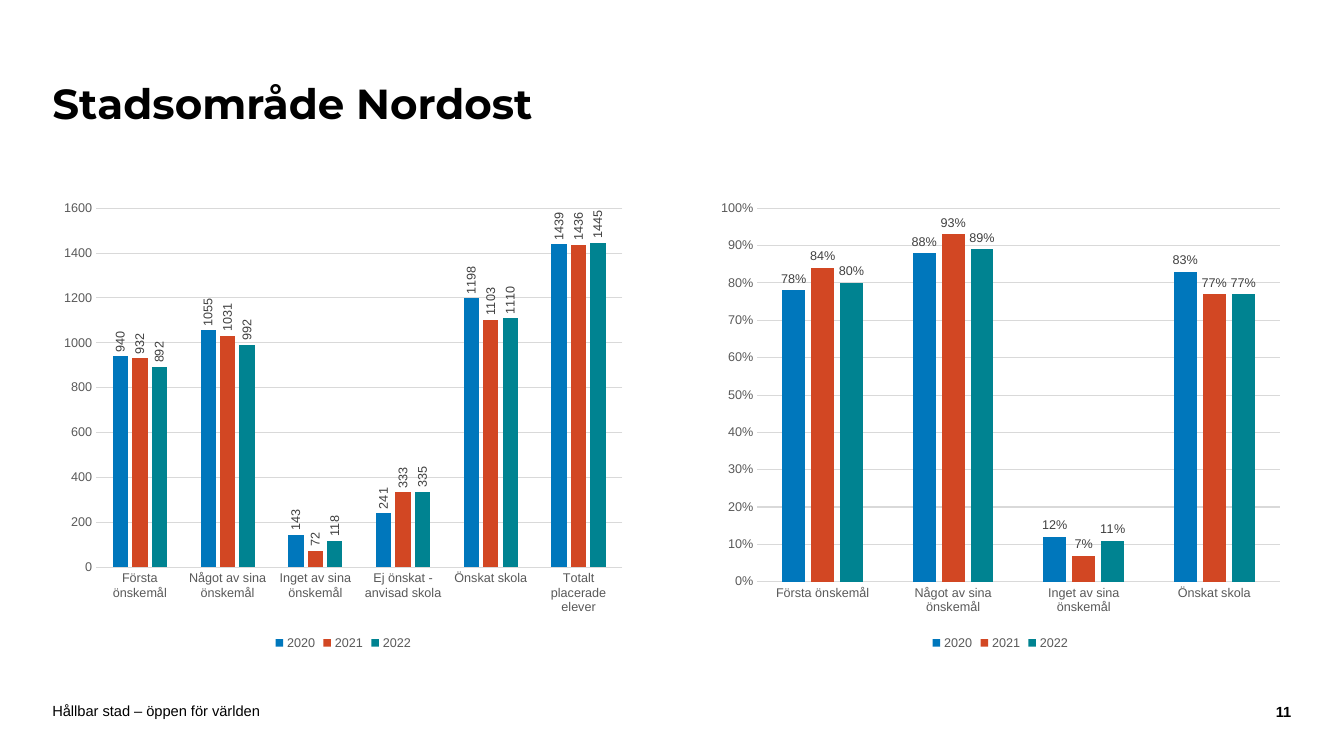
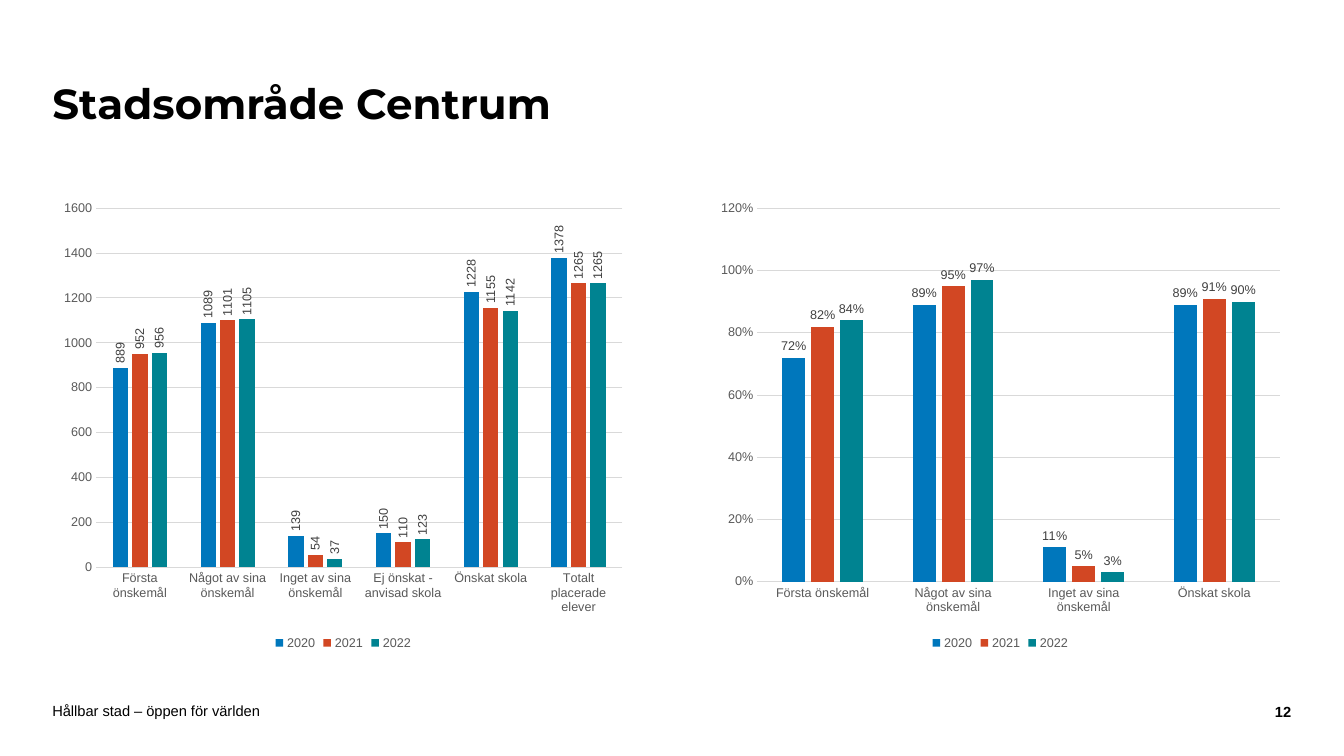
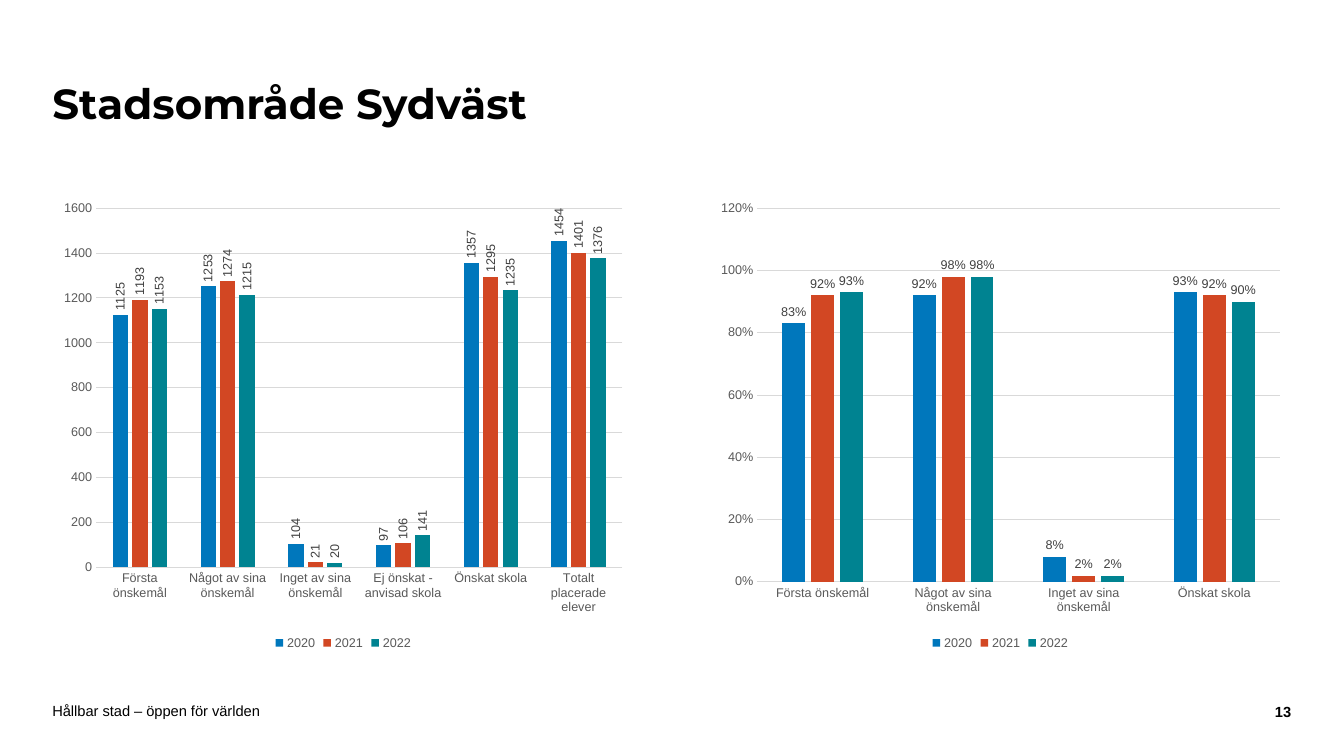
import pptx
import pptx.chart.data
import pptx.dml.color
import pptx.enum.chart
import pptx.enum.text
import pptx.util

Cm, Pt = pptx.util.Cm, pptx.util.Pt
ALIGN = pptx.enum.text.PP_ALIGN
TICK = pptx.enum.chart.XL_TICK_MARK

COLORS = {"text": "000000", "axis": "595959", "label": "404040", "grid": "D9D9D9",
          "2020": "0077BC", "2021": "D24723", "2022": "008391"}
FOOTER = "Hållbar stad – öppen för världen"
FIRST_PAGE = 11

# Layout in cm
MARGIN = 1.32
CHART_W, CHART_H, CHART_TOP = 14.66, 11.66, 4.83
CHART_LEFTS = (MARGIN, 17.88)

# Pupils per category and year
COUNT_CATS = ["Första önskemål", "Något av sina önskemål", "Inget av sina önskemål",
              "Ej önskat - anvisad skola", "Önskat skola", "Totalt placerade elever"]
SHARE_CATS = COUNT_CATS[:3] + ["Önskat skola"]
# Area name, counts, top and step of the share axis
AREAS = [
    ("Nordost", {"2020": [940, 1055, 143, 241, 1198, 1439],
                 "2021": [932, 1031, 72, 333, 1103, 1436],
                 "2022": [892, 992, 118, 335, 1110, 1445]}, 1, 0.1),
    ("Centrum", {"2020": [889, 1089, 139, 150, 1228, 1378],
                 "2021": [952, 1101, 54, 110, 1155, 1265],
                 "2022": [956, 1105, 37, 123, 1142, 1265]}, 1.2, 0.2),
    ("Sydväst", {"2020": [1125, 1253, 104, 97, 1357, 1454],
                 "2021": [1193, 1274, 21, 106, 1295, 1401],
                 "2022": [1153, 1215, 20, 141, 1235, 1376]}, 1.2, 0.2),
]


def rgb(name):
    return pptx.dml.color.RGBColor.from_string(COLORS[name])


def style_font(font, size=9, color="axis", name="Arial", bold=False):
    font.size, font.name, font.bold = Pt(size), name, bold
    font.color.rgb = rgb(color)


def write(tf, text, align=ALIGN.LEFT, spacing=1.0, **font):
    p = tf.paragraphs[0]
    p.alignment, p.line_spacing = align, spacing
    r = p.add_run()
    r.text = text
    style_font(r.font, **font)


def shares(counts):
    """Wishes as a share of those who chose, and choosers as a share of all."""
    *wishes, _, chose, total = counts
    return [round(n / chose, 2) for n in wishes] + [round(chose / total, 2)]


class Deck:
    def __init__(self):
        self.prs = pptx.Presentation()
        self.prs.slide_width, self.prs.slide_height = Cm(33.87), Cm(19.05)
        self.s = None

    def slide(self, title, page):
        self.s = self.prs.slides.add_slide(self.prs.slide_layouts[6])
        self.text(30.91, 17.73, 1.63, 0.41, str(page), align=ALIGN.RIGHT,
                  size=10.5, color="text", bold=True)
        self.text(MARGIN, 17.7, 24, 0.41, FOOTER, size=10.5, color="text")
        self.text(MARGIN, 1.07, 25.48, 3.2, title, pad=0.13, spacing=0.9,
                  size=30, color="text", name="Montserrat", bold=True)

    def text(self, x, y, w, h, text, pad=0, **fmt):
        tf = self.s.shapes.add_textbox(Cm(x), Cm(y), Cm(w), Cm(h)).text_frame
        tf.word_wrap = True
        tf.vertical_anchor = pptx.enum.text.MSO_ANCHOR.MIDDLE
        tf.margin_left = tf.margin_right = 0
        tf.margin_top = tf.margin_bottom = Cm(pad)
        write(tf, text, **fmt)

    def columns(self, x, cats, series, top, step, fmt="General", upright=False):
        data = pptx.chart.data.CategoryChartData(number_format=fmt)
        data.categories = cats
        for name, values in series.items():
            data.add_series(name, values)
        chart = self.s.shapes.add_chart(
            pptx.enum.chart.XL_CHART_TYPE.COLUMN_CLUSTERED,
            Cm(x), Cm(CHART_TOP), Cm(CHART_W), Cm(CHART_H), data).chart
        style_font(chart.font, size=10, color="text")
        chart.has_title = False
        chart.has_legend = True
        chart.legend.position = pptx.enum.chart.XL_LEGEND_POSITION.BOTTOM
        chart.legend.include_in_layout = False
        style_font(chart.legend.font)

        # Axes
        for axis in (chart.category_axis, chart.value_axis):
            axis.major_tick_mark = axis.minor_tick_mark = TICK.NONE
            style_font(axis.tick_labels.font)
        value_axis = chart.value_axis
        value_axis.minimum_scale, value_axis.maximum_scale = 0, top
        value_axis.major_unit = step
        value_axis.tick_labels.number_format = fmt
        value_axis.tick_labels.number_format_is_linked = False
        value_axis.format.line.fill.background()
        for part in (chart.category_axis, value_axis.major_gridlines):
            part.format.line.color.rgb = rgb("grid")
            part.format.line.width = Pt(0.75)

        # Columns and their labels
        plot = chart.plots[0]
        plot.gap_width, plot.overlap = 219, -27
        plot.vary_by_categories = False
        for ser in plot.series:
            ser.format.fill.solid()
            ser.format.fill.fore_color.rgb = rgb(ser.name)
            ser.invert_if_negative = False
            labels = ser.data_labels
            labels.show_value = True
            labels.position = pptx.enum.chart.XL_LABEL_POSITION.OUTSIDE_END
            labels.number_format = fmt
            labels.number_format_is_linked = False
            style_font(labels.font, color="label")
            if upright:
                body = labels._element.get_or_add_txPr().bodyPr
                body.set("rot", "-5400000")
                body.set("vert", "horz")


def main():
    deck = Deck()
    for page, (area, counts, top, step) in enumerate(AREAS, FIRST_PAGE):
        deck.slide(f"Stadsområde {area}", page)
        deck.columns(CHART_LEFTS[0], COUNT_CATS, counts, 1600, 200, upright=True)
        deck.columns(CHART_LEFTS[1], SHARE_CATS,
                     {year: shares(n) for year, n in counts.items()},
                     top, step, fmt="0%")
    deck.prs.save("out.pptx")


if __name__ == "__main__":
    main()
